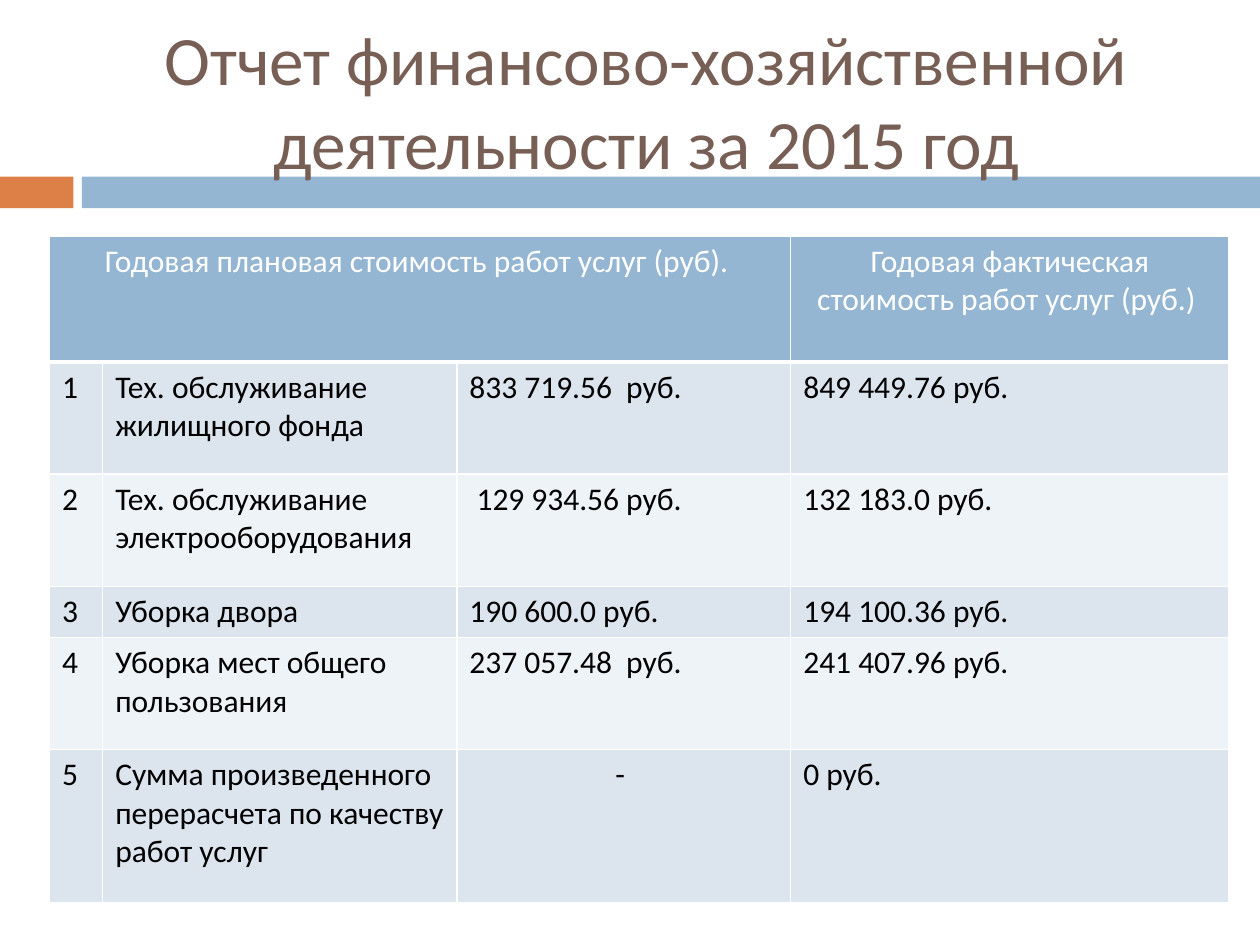
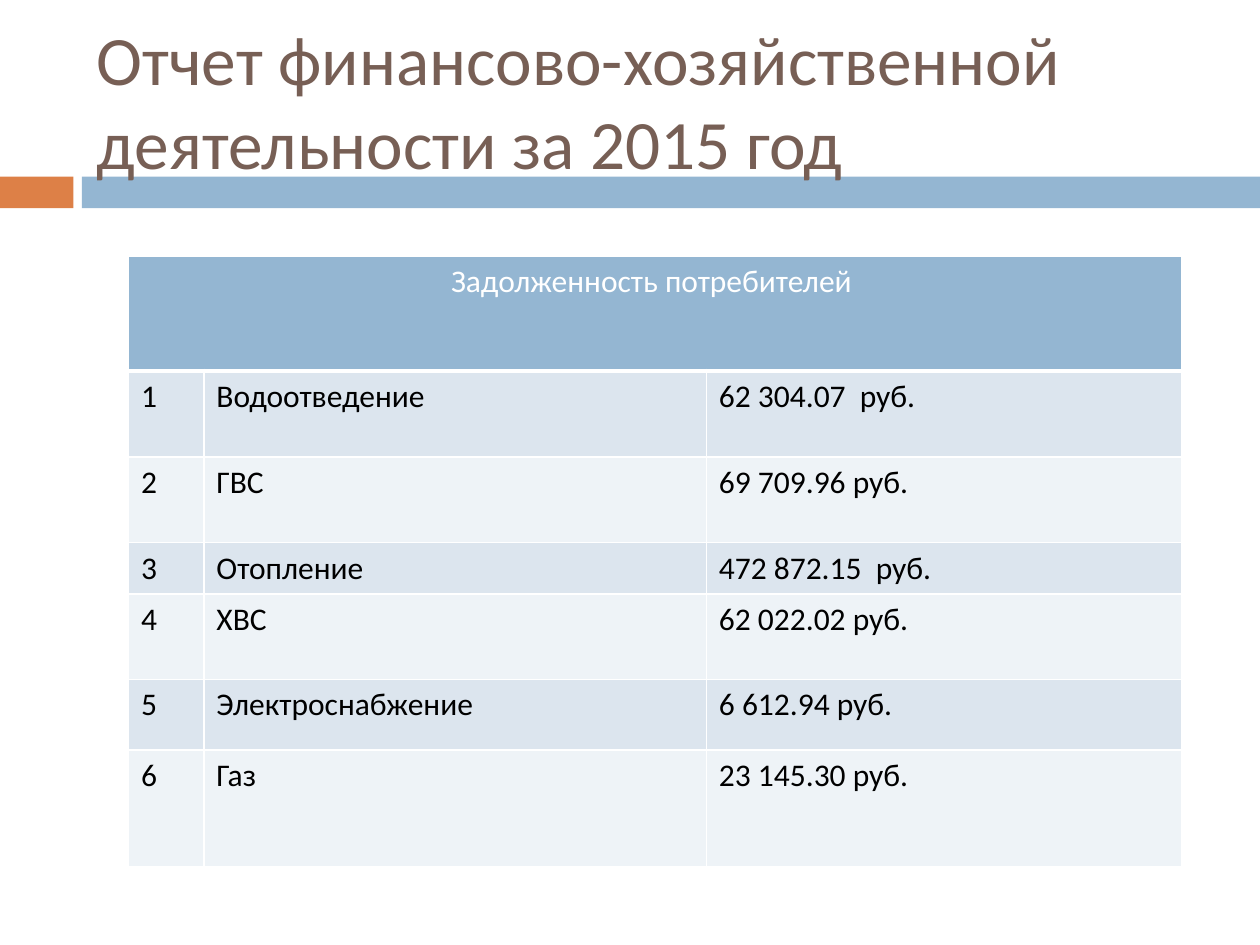
from lxml import etree
from pptx import Presentation
from pptx.dml.color import RGBColor
from pptx.enum.shapes import MSO_SHAPE
from pptx.enum.text import MSO_ANCHOR, MSO_AUTO_SIZE, PP_ALIGN
from pptx.oxml.ns import qn
from pptx.util import Cm, Pt

RECT = MSO_SHAPE.RECTANGLE
MIDDLE = MSO_ANCHOR.MIDDLE
NO_AUTOFIT = MSO_AUTO_SIZE.NONE
LEFT, CENTER = PP_ALIGN.LEFT, PP_ALIGN.CENTER

WHITE = RGBColor(0xFF, 0xFF, 0xFF)
BLACK = RGBColor(0x00, 0x00, 0x00)
BROWN = RGBColor(0x77, 0x5F, 0x55)
ORANGE = RGBColor(0xDD, 0x80, 0x47)
BLUE = RGBColor(0x94, 0xB6, 0xD2)
ROW_ODD = RGBColor(0xDC, 0xE5, 0xEE)
ROW_EVEN = RGBColor(0xEE, 0xF3, 0xF7)

TITLE = "Отчет финансово-хозяйственной деятельности за 2015 год"


class Deck:
    """Holds the report style and the current slide."""

    font = "Calibri"
    title_size = Pt(39.6)
    cell_size = Pt(18)

    def __init__(self):
        self.prs = Presentation()
        self.prs.slide_width, self.prs.slide_height = Cm(25.4), Cm(19.05)
        self.s = None

    def add_slide(self, title, align):
        self.s = self.prs.slides.add_slide(self.prs.slide_layouts[5])
        self.title(title, align)
        self.band(0, 1.48, ORANGE)
        self.band(1.65, 23.75, BLUE)

    def title(self, text, align):
        sp = self.s.shapes.title
        sp.left, sp.top, sp.width, sp.height = Cm(1.7), Cm(0.64), Cm(22.66), Cm(2.74)
        tf = sp.text_frame
        tf.text = text
        tf.word_wrap = True
        tf.auto_size = NO_AUTOFIT
        tf.vertical_anchor = MIDDLE
        self.format(tf.paragraphs[0], self.title_size, BROWN, align)

    def band(self, left, width, color):
        sp = self.s.shapes.add_shape(RECT, Cm(left), Cm(3.56), Cm(width), Cm(0.64))
        sp.shadow.inherit = False
        sp.fill.solid()
        sp.fill.fore_color.rgb = color
        sp.line.fill.background()
        # The title's descenders overlap the band, so the band goes behind it
        self.s.shapes.title.element.addprevious(sp.element)

    def format(self, p, size, color, align):
        p.alignment = align
        for r in p.runs:
            r.font.name = self.font
            r.font.size = size
            r.font.color.rgb = color

    def borders(self, cell, bottom):
        tc_pr = cell._tc.get_or_add_tcPr()
        for side, width in (("L", 1), ("R", 1), ("T", 1), ("B", bottom)):
            ln = etree.SubElement(tc_pr, qn(f"a:ln{side}"), w=str(Pt(width)))
            fill = etree.SubElement(ln, qn("a:solidFill"))
            etree.SubElement(fill, qn("a:srgbClr"), val=str(WHITE))

    def cell(self, cell, text, fill, color, align, bottom=1):
        cell.text = text
        self.format(cell.text_frame.paragraphs[0], self.cell_size, color, align)
        self.borders(cell, bottom)
        cell.fill.solid()
        cell.fill.fore_color.rgb = fill

    def table(self, left, top, widths, heights, header, rows):
        """Add a table whose first header cell spans three columns."""
        frame = self.s.shapes.add_table(len(heights), len(widths), Cm(left), Cm(top),
                                        Cm(sum(widths)), Cm(sum(heights)))
        table = frame.table
        table.first_row = table.horz_banding = False
        for column, width in zip(table.columns, widths):
            column.width = Cm(width)
        for row, height in zip(table.rows, heights):
            row.height = Cm(height)

        # Header row
        table.cell(0, 0).merge(table.cell(0, 2))
        header_texts = [header[0], "", "", *header[1:]]
        for j, text in enumerate(header_texts):
            self.cell(table.cell(0, j), text, BLUE, WHITE, CENTER, bottom=3)

        # Numbered rows
        for i, values in enumerate(rows, start=1):
            fill = ROW_ODD if i % 2 else ROW_EVEN
            for j, text in enumerate([str(i), *values]):
                align = CENTER if text.strip() == "-" else LEFT
                self.cell(table.cell(i, j), text, fill, BLACK, align)


def main():
    deck = Deck()

    # Planned and actual cost of services
    deck.add_slide(TITLE, CENTER)
    deck.table(
        1, 4.76, [1.07, 7.14, 6.73, 8.84], [2.54, 2.26, 2.26, 1.02, 2.26, 3.1],
        ["Годовая плановая стоимость работ услуг (руб). ",
         "Годовая фактическая стоимость работ услуг (руб.) "],
        [("Тех. обслуживание жилищного фонда", "833 719.56  руб.", "849 449.76 руб."),
         ("Тех. обслуживание электрооборудования", " 129 934.56 руб.", "132 183.0 руб."),
         ("Уборка двора", "190 600.0 руб.", "194 100.36 руб."),
         ("Уборка мест общего пользования", "237 057.48  руб.", "241 407.96 руб."),
         ("Сумма произведенного перерасчета по качеству работ услуг", "- ", "0 руб.")])

    # Consumer debt
    deck.add_slide(TITLE, LEFT)
    deck.table(
        2.59, 5.16, [1.52, 10.13, 9.58], [2.32, 1.73, 1.73, 1.02, 1.73, 1.42, 2.36],
        ["Задолженность потребителей "],
        [("Водоотведение", "62 304.07  руб."),
         ("ГВС", "69 709.96 руб."),
         ("Отопление", "472 872.15  руб."),
         ("ХВС", "62 022.02 руб."),
         ("Электроснабжение", "6 612.94 руб."),
         ("Газ", "23 145.30 руб.")])

    deck.prs.save("out.pptx")


if __name__ == "__main__":
    main()
